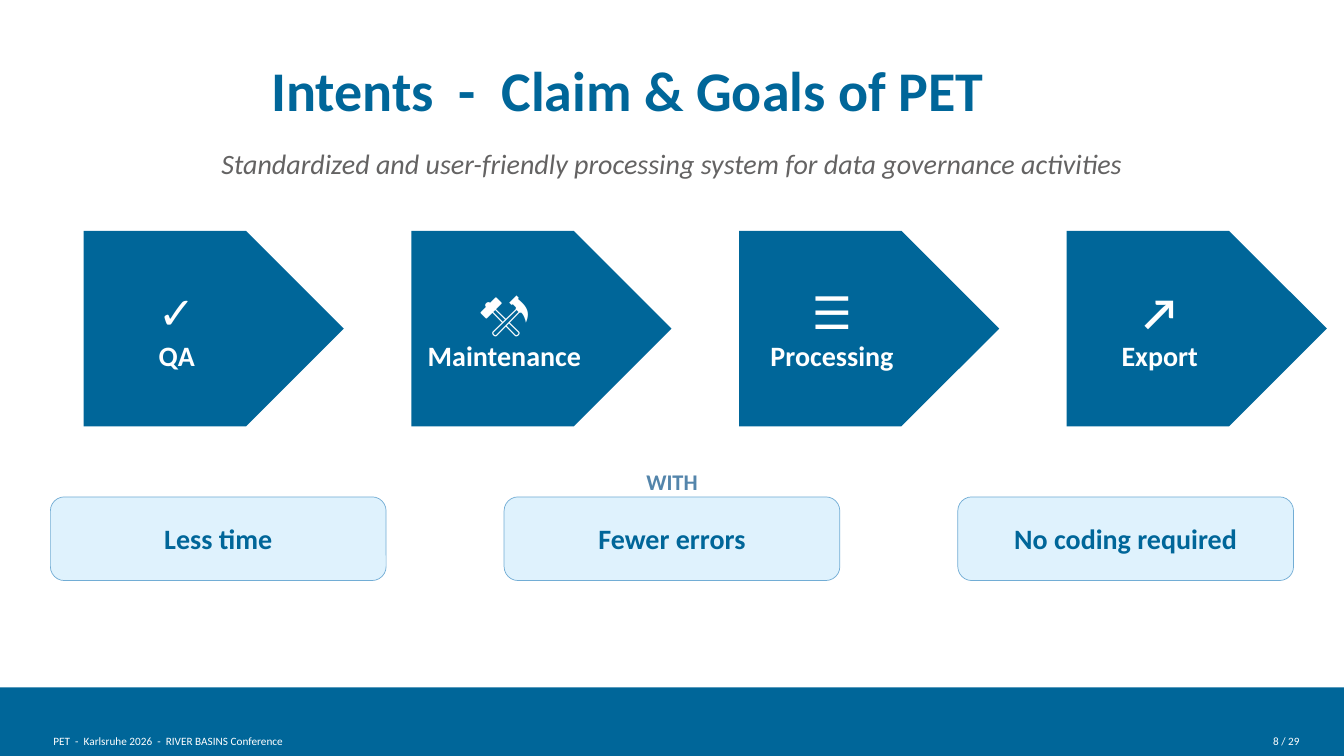
from pptx import Presentation
from pptx.dml.color import RGBColor
from pptx.enum.shapes import MSO_SHAPE
from pptx.enum.text import MSO_ANCHOR, PP_ALIGN
from pptx.util import Inches, Pt

FONT = "Calibri"
BLUE, STEEL, SKY, PALE = "006699", "5485AB", "72ADD5", "DFF2FD"
GRAY, WHITE = "646363", "FFFFFF"
THIN = (0.03, 0.03, 0.03, 0.03)

STEPS = [("✓", "QA"), ("⚒", "Maintenance"), ("☰", "Processing"), ("↗", "Export")]
BENEFITS = ["Less time", "Fewer errors", "No coding required"]


def rgb(color):
    return RGBColor.from_string(color)


def set_frame(tf, insets, anchor=MSO_ANCHOR.TOP):
    tf.word_wrap = True
    tf.vertical_anchor = anchor
    tf.margin_left, tf.margin_top, tf.margin_right, tf.margin_bottom = map(Inches, insets)


def write(p, text, size, color, bold=False, italic=False, align=PP_ALIGN.LEFT):
    p.alignment = align
    r = p.add_run()
    r.text = text
    r.font.name, r.font.size = FONT, Pt(size)
    r.font.bold, r.font.italic = bold, italic
    r.font.color.rgb = rgb(color)


def add_text(s, box, text, anchor=MSO_ANCHOR.TOP, **fmt):
    tf = s.shapes.add_textbox(*map(Inches, box)).text_frame
    set_frame(tf, THIN, anchor)
    write(tf.paragraphs[0], text, **fmt)


def add_block(s, kind, box, fill, line=None):
    sp = s.shapes.add_shape(kind, *map(Inches, box))
    sp.shadow.inherit = False
    sp.fill.solid()
    sp.fill.fore_color.rgb = rgb(fill)
    if line:
        sp.line.color.rgb = rgb(line)
        sp.line.width = Pt(0.5)
    else:
        sp.line.fill.background()
    return sp


def add_header(s, left, top, width):
    add_text(s, (left + 2.16, top, 10.15, 0.73), "Intents  -  Claim & Goals of PET",
             anchor=MSO_ANCHOR.MIDDLE, size=40, color=BLUE, bold=True)
    add_text(s, (left, top + 0.9, width, 0.39),
             "Standardized and user-friendly processing system for data governance activities",
             size=20, color=GRAY, italic=True, align=PP_ALIGN.CENTER)


def add_steps(s, left, top, width, height):
    """Row of arrow blocks, each with a symbol above its label."""
    step_w = 2.58
    pitch = (width - step_w) / (len(STEPS) - 1)
    for i, step in enumerate(STEPS):
        sp = add_block(s, MSO_SHAPE.PENTAGON, (left + i * pitch, top, step_w, height), BLUE)
        tf = sp.text_frame
        set_frame(tf, (0.06, 0.08, 0.31, 0.08), MSO_ANCHOR.MIDDLE)
        for p, text, size in zip((tf.paragraphs[0], tf.add_paragraph()), step, (32, 20)):
            write(p, text, size, WHITE, bold=True, align=PP_ALIGN.CENTER)


def add_benefits(s, left, top, width):
    """Caption over a row of evenly spaced rounded boxes."""
    add_text(s, (left, top, width, 0.33), "WITH",
             size=16, color=STEEL, bold=True, align=PP_ALIGN.CENTER)
    box_w = 3.33
    pitch = (width - box_w) / (len(BENEFITS) - 1)
    for i, benefit in enumerate(BENEFITS):
        sp = add_block(s, MSO_SHAPE.ROUNDED_RECTANGLE,
                       (left + i * pitch, top + 0.32, box_w, 0.83), PALE, SKY)
        set_frame(sp.text_frame, (0.06, 0.03, 0.06, 0.03), MSO_ANCHOR.MIDDLE)
        write(sp.text_frame.paragraphs[0], benefit, 20, BLUE, bold=True, align=PP_ALIGN.CENTER)


def add_footer(s, left, top, width, height):
    add_block(s, MSO_SHAPE.RECTANGLE, (left, top, width, height), BLUE)
    text_top = top + 0.43
    add_text(s, (left + 0.5, text_top, 6.94, 0.19),
             "PET  -  Karlsruhe 2026  -  RIVER BASINS Conference", size=8, color=WHITE)
    add_text(s, (left + width - 1.52, text_top, 1.11, 0.19), "8 / 29",
             size=8, color=WHITE, align=PP_ALIGN.RIGHT)


def main():
    prs = Presentation()
    prs.slide_width, prs.slide_height = Inches(13.33), Inches(7.5)
    s = prs.slides.add_slide(prs.slide_layouts[6])
    add_footer(s, 0, 6.82, 13.33, 0.68)
    add_header(s, 0.5, 0.52, 12.33)
    add_steps(s, 0.83, 2.29, 12.33, 1.94)
    add_benefits(s, 0.5, 4.61, 12.33)
    prs.save("out.pptx")


if __name__ == "__main__":
    main()
